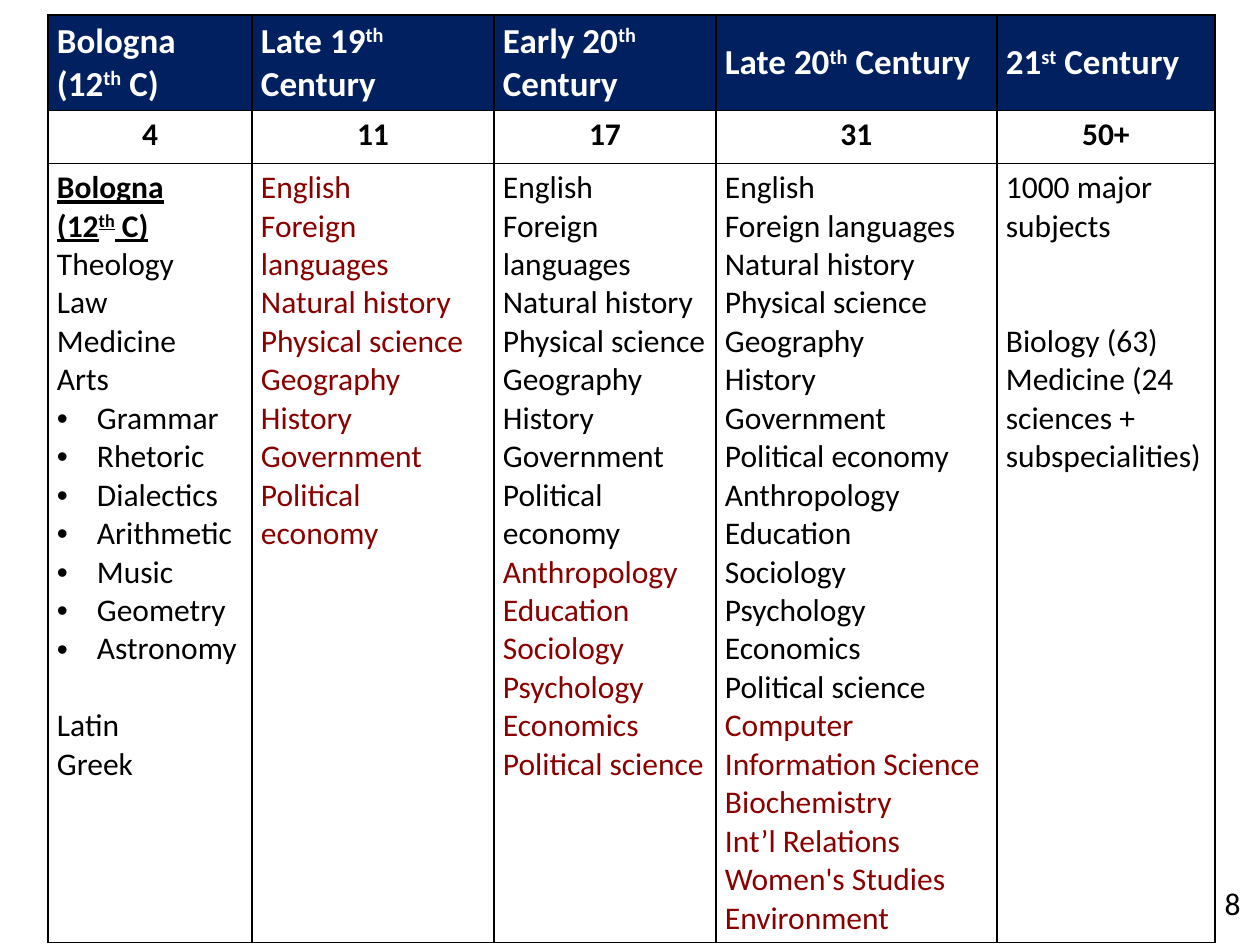
from dataclasses import dataclass
from typing import Optional

from lxml.etree import SubElement, fromstring
from pptx import Presentation
from pptx.dml.color import RGBColor
from pptx.enum.text import MSO_ANCHOR as Anchor, PP_ALIGN as Align
from pptx.oxml.ns import qn
from pptx.util import Emu, Pt

EMU_PER_PX = 914400 / 126
NAVY = RGBColor(0x00, 0x20, 0x60)
WHITE = RGBColor(0xFF, 0xFF, 0xFF)
BLACK = RGBColor(0x00, 0x00, 0x00)
MAROON = RGBColor(0x8A, 0x00, 0x00)
DRAWING_NS = "http://schemas.openxmlformats.org/drawingml/2006/main"
BULLET_INDENT = 40
LINE_HEIGHT = 22  # points, one line of 18 pt text


def px(length: int) -> Emu:
    return Emu(round(length * EMU_PER_PX))


@dataclass(frozen=True)
class Line:
    """One paragraph; ^ marks wrap a superscript, \\v breaks the line."""
    text: str
    color: RGBColor = BLACK
    size: int = 18
    bold: bool = False
    underline: bool = False
    bullet: bool = False
    gap_lines: int = 0
    align: Optional[Align] = None


@dataclass(frozen=True)
class Era:
    heading: str
    count: str
    width: int
    subjects: list[Line]


def lines(texts: list[str], **style) -> list[Line]:
    return [Line(text, **style) for text in texts]


# Subjects by period; each century's additions are maroon
LATE_19TH = ["English", "Foreign languages\vNatural history", "Physical science",
             "Geography", "History", "Government", "Political economy"]
EARLY_20TH = ["Anthropology", "Education", "Sociology Psychology Economics",
              "Political science"]
LATE_20TH = ["Computer", "Information Science Biochemistry",
             "Int’l Relations Women's Studies Environment"]
LIBERAL_ARTS = ["Grammar", "Rhetoric", "Dialectics", "Arithmetic", "Music",
                "Geometry", "Astronomy"]

ERAS = [
    Era("Bologna (12^th^ C)", "4", 204,
        lines(["Bologna", "(12^th^ C)"], bold=True, underline=True)
        + lines(["Theology", "Law", "Medicine", "Arts"])
        + lines(LIBERAL_ARTS, bullet=True)
        + [Line("Latin", gap_lines=1), Line("Greek")]),
    Era("Late 19^th^ Century", "11", 242, lines(LATE_19TH, color=MAROON)),
    Era("Early 20^th^ Century", "17", 222,
        lines(LATE_19TH) + lines(EARLY_20TH, color=MAROON)),
    Era("Late 20^th^ Century", "31", 281,
        lines(LATE_19TH + EARLY_20TH) + lines(LATE_20TH, color=MAROON)),
    Era("21^st^ Century", "50+", 218,
        [Line("1000 major subjects"), Line("Biology (63)", gap_lines=2),
         Line("Medicine (24 sciences + subspecialities)")]),
]
ROW_HEIGHTS = [93, 53, 766]


def write_line(para, line: Line) -> None:
    if line.align is not None:
        para.alignment = line.align
    if line.gap_lines:
        para.space_before = Pt(line.gap_lines * LINE_HEIGHT)
    if line.bullet:
        props = para._p.get_or_add_pPr()
        props.set("marL", str(px(BULLET_INDENT)))
        props.set("indent", str(-px(BULLET_INDENT)))
        SubElement(props, qn("a:buFont")).set("typeface", "Arial")
        SubElement(props, qn("a:buChar")).set("char", "•")
    font_values = {"name": "Calibri", "size": Pt(line.size),
                   "bold": line.bold, "underline": line.underline}
    for index, part in enumerate(line.text.split("^")):
        for row, text in enumerate(part.split("\v")):
            if row:
                para.add_line_break()
            span = para.add_run()
            span.text = text
            for name, value in font_values.items():
                setattr(span.font, name, value)
            span.font.color.rgb = line.color
            if index % 2:
                span._r.get_or_add_rPr().set("baseline", "30000")


def write_text(frame, content: list[Line]) -> None:
    for index, line in enumerate(content):
        write_line(frame.add_paragraph() if index else frame.paragraphs[0], line)


def add_borders(cell) -> None:
    props = cell._tc.get_or_add_tcPr()
    for index, side in enumerate(("lnL", "lnR", "lnT", "lnB")):
        props.insert(index, fromstring(
            f'<a:{side} xmlns:a="{DRAWING_NS}" w="12700"><a:solidFill>'
            f'<a:srgbClr val="{BLACK}"/></a:solidFill></a:{side}>'))


def fill_cell(cell, content: list[Line], fill: RGBColor, anchor: Anchor) -> None:
    values = {"margin_left": px(9), "margin_right": px(9), "margin_top": px(5),
              "margin_bottom": px(5), "vertical_anchor": anchor}
    for name, value in values.items():
        setattr(cell, name, value)
    cell.fill.solid()
    cell.fill.fore_color.rgb = fill
    add_borders(cell)
    write_text(cell.text_frame, content)


def add_era_table(page) -> None:
    frame = page.shapes.add_table(
        len(ROW_HEIGHTS), len(ERAS), px(48), px(15),
        px(sum(era.width for era in ERAS)), px(sum(ROW_HEIGHTS)))
    table = frame.table
    for row, height in zip(table.rows, ROW_HEIGHTS):
        row.height = px(height)
    for column, era in enumerate(ERAS):
        table.columns[column].width = px(era.width)
        heading = Line(era.heading, WHITE, size=20, bold=True)
        count = Line(era.count, bold=True, align=Align.CENTER)
        fill_cell(table.cell(0, column), [heading], NAVY, Anchor.MIDDLE)
        fill_cell(table.cell(1, column), [count], WHITE, Anchor.TOP)
        fill_cell(table.cell(2, column), era.subjects, WHITE, Anchor.TOP)


def add_page_number(page) -> None:
    box = page.shapes.add_textbox(px(1012), px(878), px(241), px(50))
    box.text_frame.word_wrap = True
    write_text(box.text_frame, [Line("8", align=Align.RIGHT)])


def main() -> None:
    deck = Presentation()
    deck.slide_width, deck.slide_height = px(1260), px(945)
    page = deck.slides.add_slide(deck.slide_layouts[6])
    add_era_table(page)
    add_page_number(page)
    deck.save("out.pptx")


if __name__ == "__main__":
    main()
